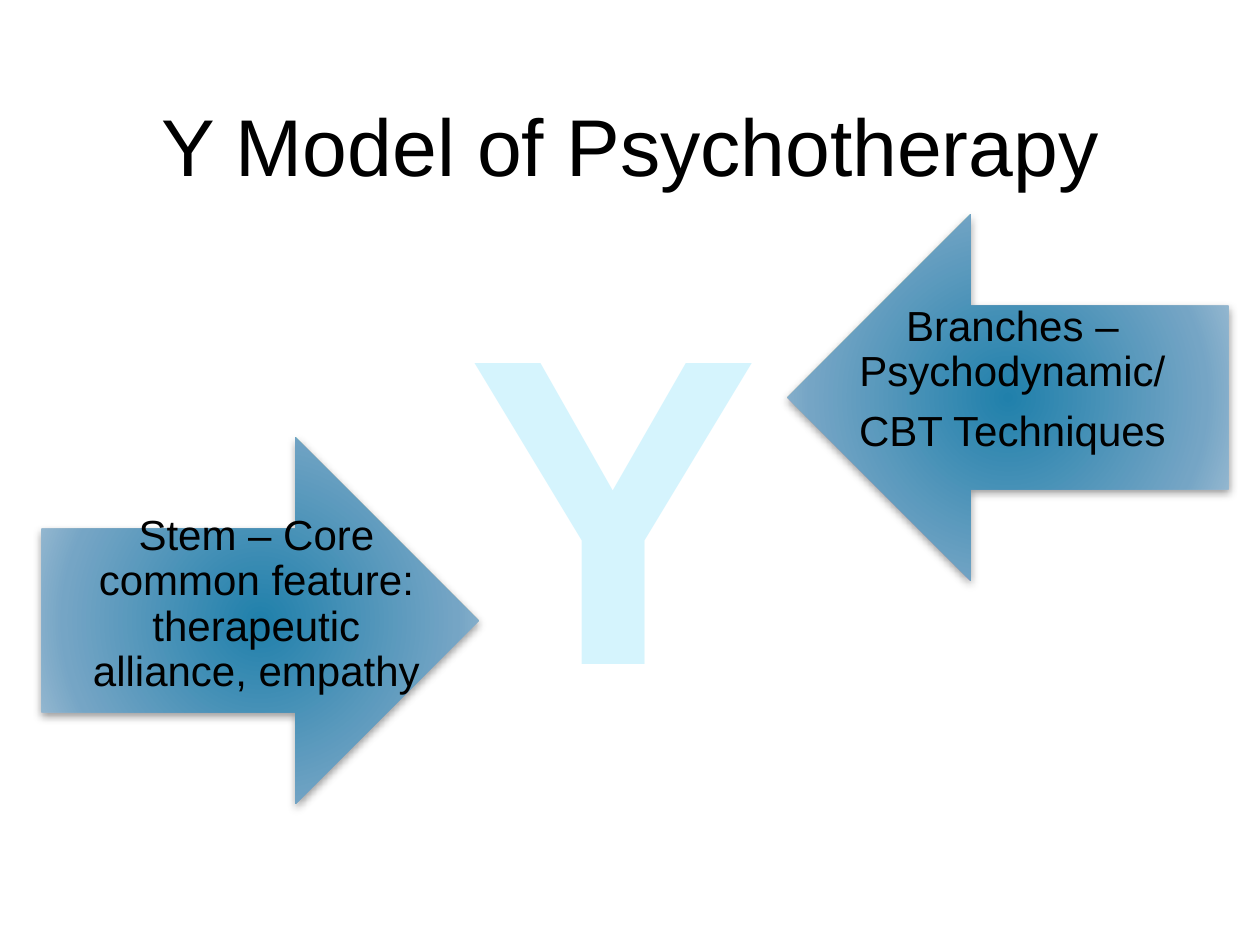
import pptx
import pptx.util
import pptx.dml.color
import pptx.enum.shapes
import pptx.enum.text
import pptx.oxml
import pptx.oxml.ns

Inches = pptx.util.Inches
Pt = pptx.util.Pt
RGBColor = pptx.dml.color.RGBColor
Shape = pptx.enum.shapes.MSO_SHAPE
Anchor = pptx.enum.text.MSO_ANCHOR
Align = pptx.enum.text.PP_ALIGN

FONT = "Arial"
BLACK = RGBColor(0x00, 0x00, 0x00)
PALE_BLUE = RGBColor(0xD5, 0xF4, 0xFD)
GRADIENT = (
    (0, RGBColor(0x20, 0x80, 0xAB)),
    (69, RGBColor(0x75, 0xA5, 0xC5)),
    (100, RGBColor(0xB8, 0xCC, 0xDC)),
)


def place(shape, box):
    shape.left, shape.top, shape.width, shape.height = map(Inches, box)


def add_run(paragraph, text, size, color, bold=False):
    paragraph.alignment = Align.CENTER
    run = paragraph.add_run()
    run.text = text
    run.font.name = FONT
    run.font.size = Pt(size)
    run.font.bold = bold
    run.font.color.rgb = color


def fill_title(slide, box):
    title = slide.shapes.title
    place(title, box)
    title.text_frame.vertical_anchor = Anchor.BOTTOM
    add_run(title.text_frame.paragraphs[0], "Y Model of Psychotherapy", 46, BLACK)


def add_letter(slide, box):
    letter = slide.shapes.add_textbox(*map(Inches, box))
    letter.text_frame.word_wrap = False
    add_run(letter.text_frame.paragraphs[0], "Y", 250, PALE_BLUE, bold=True)


def apply_radial_fill(shape):
    stops = "".join(
        f'<a:gs pos="{position * 1000}"><a:srgbClr val="{color}"/></a:gs>'
        for position, color in GRADIENT
    )
    gradient = pptx.oxml.parse_xml(
        f'<a:gradFill {pptx.oxml.ns.nsdecls("a")} rotWithShape="1">'
        f"<a:gsLst>{stops}</a:gsLst>"
        '<a:path path="circle">'
        '<a:fillToRect l="100000" t="100000" r="100000" b="100000"/>'
        "</a:path></a:gradFill>"
    )
    shape.fill.background()
    properties = shape.fill._xPr
    properties.replace(properties.find(pptx.oxml.ns.qn("a:noFill")), gradient)


def apply_soft_shadow(shape):
    shape.shadow.inherit = False
    effects = shape._element.spPr.find(pptx.oxml.ns.qn("a:effectLst"))
    effects.append(pptx.oxml.parse_xml(
        f'<a:outerShdw {pptx.oxml.ns.nsdecls("a")} blurRad="{Pt(5)}" '
        f'dist="{Pt(2)}" dir="5400000" rotWithShape="0">'
        '<a:srgbClr val="000000"><a:alpha val="40000"/></a:srgbClr>'
        "</a:outerShdw>"
    ))


def add_arrow(slide, direction, box, label_box, lines):
    arrow = slide.shapes.add_shape(direction, *map(Inches, box))
    apply_radial_fill(arrow)
    arrow.line.fill.background()
    apply_soft_shadow(arrow)

    label = slide.shapes.add_textbox(*map(Inches, label_box)).text_frame
    label.word_wrap = True
    label.vertical_anchor = Anchor.MIDDLE
    label.margin_left = label.margin_right = 0
    label.margin_top = label.margin_bottom = 0
    for index, line in enumerate(lines):
        paragraph = label.add_paragraph() if index else label.paragraphs[0]
        paragraph.line_spacing = 0.9
        paragraph.space_before = Pt(8.4 if index else 0)
        add_run(paragraph, line, 24, BLACK)


def main():
    deck = pptx.Presentation()
    deck.slide_width, deck.slide_height = Inches(10), Inches(7.5)
    slide = deck.slides.add_slide(deck.slide_layouts[5])

    fill_title(slide, (0.6, 0.12, 8.8, 1.46))
    add_letter(slide, (3.5, 1.75, 2.73, 4.31))
    add_arrow(
        slide, Shape.RIGHT_ARROW, (0.33, 3.47, 3.47, 2.91), (0.61, 4.07, 2.85, 1.46),
        ["Stem – Core common feature: therapeutic alliance, empathy"],
    )
    add_arrow(
        slide, Shape.LEFT_ARROW, (6.25, 1.7, 3.5, 2.91), (6.6, 2.29, 2.87, 1.46),
        ["Branches – Psychodynamic/", "CBT Techniques"],
    )
    deck.save("out.pptx")


if __name__ == "__main__":
    main()
